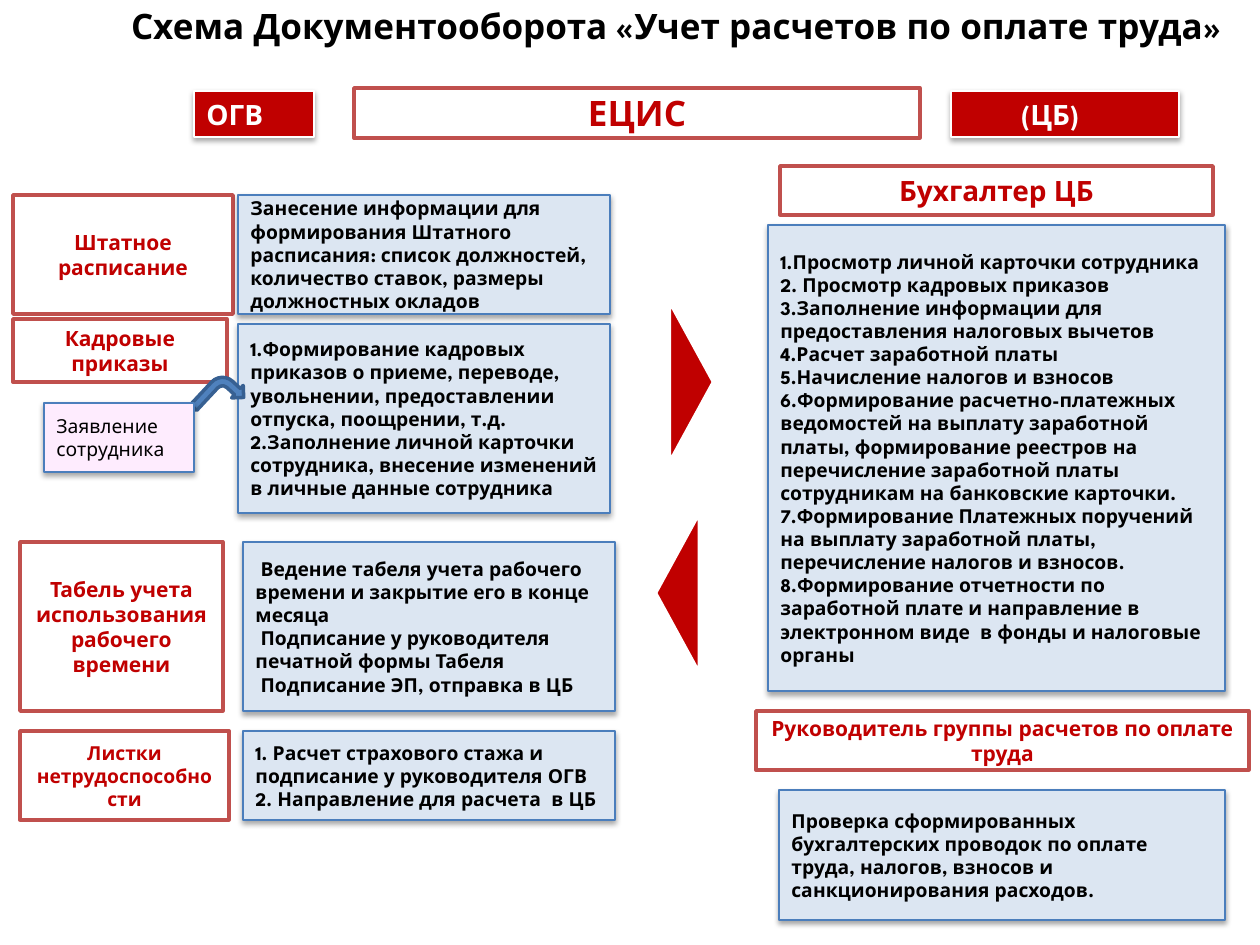
from lxml import etree
from pptx import Presentation
from pptx.dml.color import RGBColor
from pptx.enum.shapes import MSO_SHAPE as Kind
from pptx.enum.text import MSO_ANCHOR as Anchor, PP_ALIGN as Align
from pptx.oxml import parse_xml
from pptx.oxml.ns import nsdecls
from pptx.util import Pt

PX = 914400 / 126
FONT = "League Spartan"
RED, ROSE, WHITE, BLACK = "C00000", "C0504D", "FFFFFF", "000000"
PALE, BLUE = "DCE6F2", "4B7EBC"
SHADE = f"""<a:effectLst {nsdecls("a")}>
<a:outerShdw blurRad="40000" dist="23000" dir="5400000" rotWithShape="0">
<a:srgbClr val="000000"><a:alpha val="35000"/></a:srgbClr>
</a:outerShdw></a:effectLst>"""

deck = Presentation()
deck.slide_width, deck.slide_height = int(1260 * PX), int(945 * PX)
slide = deck.slides.add_slide(deck.slide_layouts[6])


def draw(kind, place, fill, line, width, shade=False, turn=0):
    item = slide.shapes.add_shape(kind, *[int(n * PX) for n in place])
    item.fill.solid()
    item.fill.fore_color.rgb = RGBColor.from_string(fill)
    item.line.color.rgb = RGBColor.from_string(line)
    item.line.width = Pt(width)
    item.rotation = turn
    item.shadow.inherit = False
    if shade:
        props = item._element.spPr
        props.replace(props.find("{*}effectLst"), parse_xml(SHADE))
    return item


def write(item, text, size, color, align=Align.LEFT, bold=True):
    frame = item.text_frame
    frame.text = text
    frame.word_wrap = True
    frame.vertical_anchor = Anchor.MIDDLE
    for para in frame.paragraphs:
        para.alignment = align
        for run in para.runs:
            run.font.name = FONT
            run.font.size = Pt(size)
            run.font.bold = bold
            run.font.color.rgb = RGBColor.from_string(color)


title = slide.shapes.add_textbox(*[int(n * PX) for n in (94, -2, 1164, 55)])
write(title, "Схема Документооборота «Учет расчетов по оплате труда»", 20, BLACK, Align.CENTER)

heads = [
    ((354, 88, 566, 50), 20, "ЕЦИС"),
    ((13, 195, 220, 119), 12, "Штатное расписание"),
    ((13, 319, 214, 63), 12, "Кадровые приказы"),
    ((20, 542, 203, 169), 12, "Табель учета использования рабочего времени"),
    ((20, 731, 209, 89), 11, "Листки нетрудоспособности"),
    ((780, 166, 433, 49), 16, "Бухгалтер ЦБ"),
    ((756, 711, 493, 59), 12, "Руководитель группы расчетов по оплате труда"),
]
for place, size, text in heads:
    write(draw(Kind.RECTANGLE, place, WHITE, ROSE, 2), text, size, RED, Align.CENTER)

tasks = [
    ((238, 195, 372, 119), [
        "Занесение информации для формирования Штатного расписания: список должностей, "
        "количество ставок, размеры должностных окладов"]),
    ((238, 324, 372, 189), [
        "1.Формирование кадровых приказов о приеме, переводе, увольнении, "
        "предоставлении отпуска, поощрении, т.д.",
        "2.Заполнение личной карточки сотрудника, внесение изменений "
        "в личные данные сотрудника"]),
    ((243, 542, 372, 169), [
        " Ведение табеля учета рабочего времени и закрытие его в конце месяца",
        " Подписание у руководителя печатной формы Табеля",
        " Подписание ЭП, отправка в ЦБ"]),
    ((243, 731, 372, 89), [
        "1. Расчет страхового стажа и подписание у руководителя ОГВ",
        "2. Направление для расчета  в ЦБ"]),
    ((768, 225, 457, 466), [
        "1.Просмотр личной карточки сотрудника",
        "2. Просмотр кадровых приказов",
        "3.Заполнение информации для предоставления налоговых вычетов",
        "4.Расчет заработной платы",
        "5.Начисление налогов и взносов",
        "6.Формирование расчетно-платежных ведомостей на выплату заработной платы, "
        "формирование реестров на перечисление заработной платы сотрудникам "
        "на банковские карточки.",
        "7.Формирование Платежных поручений на выплату заработной платы, "
        "перечисление налогов и взносов.",
        "8.Формирование отчетности по заработной плате и направление "
        "в электронном виде  в фонды и налоговые органы"]),
    ((779, 790, 446, 130), [
        "Проверка сформированных бухгалтерских проводок по оплате труда, налогов, "
        "взносов и санкционирования расходов."]),
]
for place, lines in tasks:
    write(draw(Kind.RECTANGLE, place, PALE, BLUE, 0.75, True), "\n".join(lines), 11, BLACK)

draw(Kind.BENT_ARROW, (203, 373, 34, 50), "4F81BD", "376092", 2, turn=43)
claim = draw(Kind.RECTANGLE, (44, 403, 150, 69), "FEECFE", BLUE, 0.75, True)
write(claim, "Заявление сотрудника", 11, BLACK, bold=False)

tags = [
    ((951, 91, 228, 46), "(ЦБ)", Align.CENTER, 42),
    ((194, 91, 120, 46), "ОГВ", Align.LEFT, 13),
]
for place, text, align, inset in tags:
    tag = draw(Kind.RECTANGLE, place, RED, WHITE, 0.75, True)
    write(tag, text, 16, WHITE, align)
    tag.text_frame.margin_right = int(inset * PX)

for left, top, turn in [(611, 360, 90), (597, 571, 270)]:
    draw(Kind.ISOSCELES_TRIANGLE, (left, top, 161, 44), RED, WHITE, 2, turn=turn)

deck.save("out.pptx")
